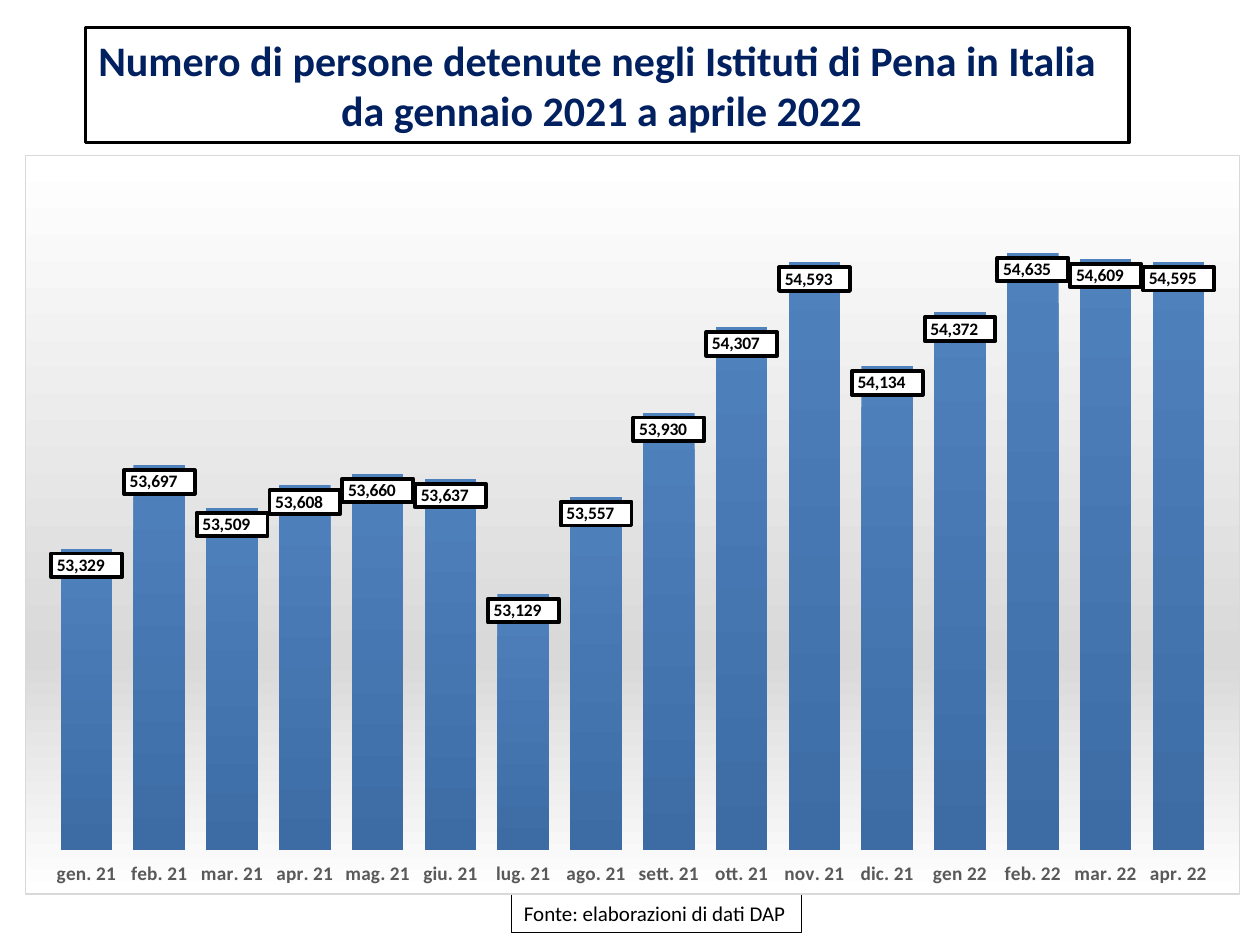
from lxml import etree
from pptx import Presentation
from pptx.chart.data import CategoryChartData
from pptx.dml.color import RGBColor
from pptx.enum.chart import XL_CHART_TYPE as ChartType, XL_LABEL_POSITION as LabelPosition
from pptx.enum.chart import XL_TICK_LABEL_POSITION as TickLabels, XL_TICK_MARK as TickMark
from pptx.enum.text import MSO_ANCHOR as Anchor, MSO_AUTO_SIZE as AutoSize, PP_ALIGN as Align
from pptx.oxml import parse_xml
from pptx.oxml.ns import nsdecls, qn
from pptx.util import Inches, Pt

WHITE = RGBColor(0xFF, 0xFF, 0xFF)
BLACK = RGBColor(0x00, 0x00, 0x00)
NAVY = RGBColor(0x00, 0x20, 0x60)
GREY = RGBColor(0xD9, 0xD9, 0xD9)
DARK_GREY = RGBColor(0x59, 0x59, 0x59)
BLUE = RGBColor(0x4F, 0x81, 0xBD)
DEEP_BLUE = RGBColor(0x3D, 0x6C, 0xA4)

NUMBER_FORMAT = r'_-* #,##0\ _€_-;\-* #,##0\ _€_-;_-* "-"?'
DETAINEES = {
    "gen. 21": 53329, "feb. 21": 53697, "mar. 21": 53509, "apr. 21": 53608,
    "mag. 21": 53660, "giu. 21": 53637, "lug. 21": 53129, "ago. 21": 53557,
    "sett. 21": 53930, "ott. 21": 54307, "nov. 21": 54593, "dic. 21": 54134,
    "gen 22": 54372, "feb. 22": 54635, "mar. 22": 54609, "apr. 22": 54595,
}


def set_values(target, values):
    for name, value in values.items():
        setattr(target, name, value)


def solid_fill(color):
    return f'<a:solidFill><a:srgbClr val="{color}"/></a:solidFill>'


def vertical_gradient(stops):
    """Return gradient fill XML for (percent, colour) stops, top to bottom."""
    marks = "".join(
        f'<a:gs pos="{percent * 1000}"><a:srgbClr val="{color}"/></a:gs>'
        for percent, color in stops)
    return f'<a:gradFill><a:gsLst>{marks}</a:gsLst><a:lin ang="5400000" scaled="0"/></a:gradFill>'


def chart_part_format(fill, line_color, line_width):
    """Return the shape properties of a chart part that has no public format."""
    return parse_xml(
        f'<c:spPr {nsdecls("c", "a")}>{fill}'
        f'<a:ln w="{Pt(line_width)}">{solid_fill(line_color)}</a:ln></c:spPr>')


class SlideBuilder:
    font_name = "Calibri"

    def __init__(self, slide):
        self.slide = slide

    def set_font(self, font, size, color, bold=False):
        set_values(font, {"name": self.font_name, "size": Pt(size), "bold": bold})
        font.color.rgb = color

    def place(self, shape, box):
        names = ("left", "top", "width", "height")
        set_values(shape, dict(zip(names, map(Inches, box))))

    def write_boxed(self, shape, box, lines, size, color, border, bold=False, **frame_values):
        """Fill, outline and place a text shape; lines are (text, alignment) pairs."""
        self.place(shape, box)
        shape.fill.solid()
        shape.fill.fore_color.rgb = WHITE
        shape.line.color.rgb = BLACK
        shape.line.width = Pt(border)
        frame = shape.text_frame
        set_values(frame, {"vertical_anchor": Anchor.TOP,
                           "auto_size": AutoSize.SHAPE_TO_FIT_TEXT, **frame_values})
        frame.text = "\n".join(text for text, _ in lines)
        for paragraph, (_, alignment) in zip(frame.paragraphs, lines):
            set_values(paragraph, {"alignment": alignment, "line_spacing": 1.0,
                                   "space_before": Pt(0)})
            self.set_font(paragraph.runs[0].font, size, color, bold)

    def title(self, box, lines, **values):
        self.write_boxed(self.slide.shapes.title, box, lines, **values)

    def text_box(self, box, lines, **values):
        shape = self.slide.shapes.add_textbox(*map(Inches, box))
        self.write_boxed(shape, box, lines, **values)

    def column_chart(self, box, name, values):
        data = CategoryChartData()
        data.categories = list(values)
        data.add_series(name, list(values.values()))
        chart = self.slide.shapes.add_chart(
            ChartType.COLUMN_CLUSTERED, *map(Inches, box), data).chart
        set_values(chart, {"has_legend": False, "has_title": False})
        self.set_font(chart.font, 10, BLACK)
        background = vertical_gradient([(0, WHITE), (68, GREY), (100, WHITE)])
        chart.element.find(qn("c:chart")).addnext(chart_part_format(background, GREY, 0.75))
        self.set_plot_area(chart, x=0.02, y=0.02, w=0.96, h=0.92)
        self.format_axes(chart)
        self.format_columns(chart.plots[0])

    def set_plot_area(self, chart, **fractions):
        plot_area = chart.element.find(".//" + qn("c:plotArea"))
        for layout in plot_area.findall(qn("c:layout")):
            plot_area.remove(layout)
        layout = etree.Element(qn("c:layout"))
        manual = etree.SubElement(layout, qn("c:manualLayout"))
        settings = {"layoutTarget": "inner", "xMode": "edge", "yMode": "edge", **fractions}
        for tag, value in settings.items():
            etree.SubElement(manual, qn(f"c:{tag}")).set("val", str(value))
        plot_area.insert(0, layout)

    def format_axes(self, chart):
        set_values(chart.value_axis, {
            "minimum_scale": 52000, "maximum_scale": 55000,
            "has_major_gridlines": False, "visible": False})
        set_values(chart.value_axis.tick_labels, {
            "number_format": NUMBER_FORMAT, "number_format_is_linked": False})
        axis = chart.category_axis
        set_values(axis, {
            "major_tick_mark": TickMark.NONE, "minor_tick_mark": TickMark.NONE,
            "tick_label_position": TickLabels.LOW, "has_major_gridlines": False})
        axis.format.line.fill.background()
        self.set_font(axis.tick_labels.font, 11, DARK_GREY, bold=True)

    def format_columns(self, plot):
        set_values(plot, {"gap_width": 41, "vary_by_categories": False})
        series = plot.series[0]
        fill = series.format.fill
        fill.gradient()
        fill.gradient_angle = 270
        for stop, color in zip(fill.gradient_stops, (BLUE, DEEP_BLUE)):
            stop.color.rgb = color
        labels = series.data_labels
        set_values(labels, {
            "show_value": True, "position": LabelPosition.INSIDE_END,
            "number_format": NUMBER_FORMAT, "number_format_is_linked": False})
        self.set_font(labels.font, 10, BLACK, bold=True)
        text_format = series._element.find(qn("c:dLbls")).find(qn("c:txPr"))
        text_format.addprevious(chart_part_format(solid_fill(WHITE), BLACK, 2.25))


def main():
    presentation = Presentation()
    set_values(presentation, {"slide_width": Inches(10), "slide_height": Inches(7.5)})
    title_only = presentation.slide_layouts[5]
    builder = SlideBuilder(presentation.slides.add_slide(title_only))
    builder.title(
        (0.68, 0.22, 8.28, 0.91),
        [("Numero di persone detenute negli Istituti di Pena in Italia", Align.LEFT),
         ("da gennaio 2021 a aprile 2022", Align.CENTER)],
        size=24, color=NAVY, border=2, bold=True, word_wrap=True, margin_right=Inches(0.19))
    builder.text_box(
        (4.06, 7.1, 2.3, 0.3), [("Fonte: elaborazioni di dati DAP", Align.LEFT)],
        size=12, color=BLACK, border=0.75, word_wrap=False)
    builder.column_chart((0.2, 1.23, 9.64, 5.87), "Series 1", DETAINEES)
    presentation.save("out.pptx")


if __name__ == "__main__":
    main()
